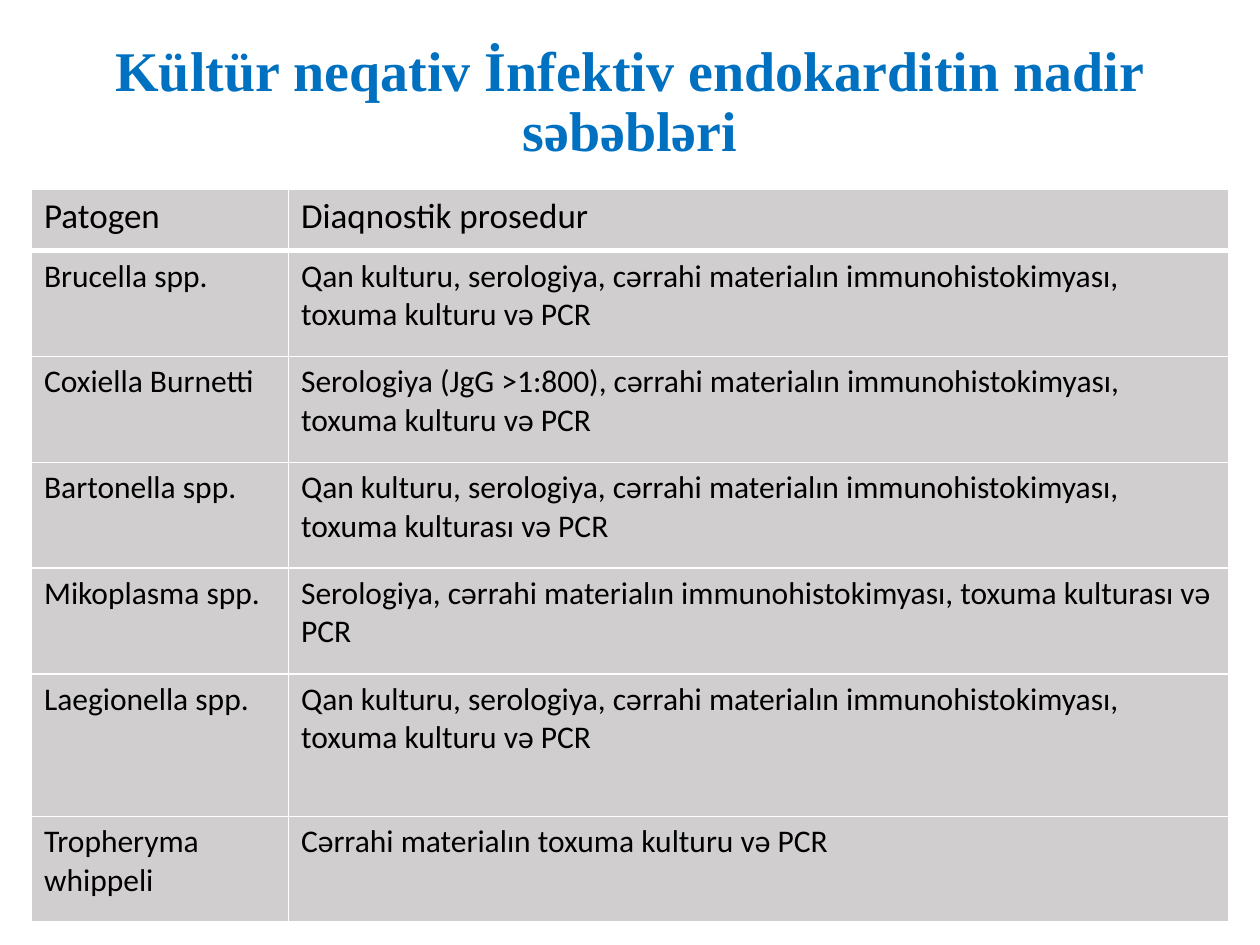
from lxml.etree import SubElement
from pptx import Presentation
from pptx.dml.color import RGBColor
from pptx.enum.text import MSO_ANCHOR, PP_ALIGN
from pptx.oxml.ns import qn
from pptx.util import Inches, Pt

BLUE, BLACK, GREY, WHITE = "0070C0", "000000", "D0CECE", "FFFFFF"

HEADING = "Kültür neqativ İnfektiv endokarditin nadir səbəbləri"
PATHOGENS = [
    ("Patogen", "Diaqnostik prosedur"),
    ("Brucella spp.", "Qan kulturu, serologiya, cərrahi materialın immunohistokimyası, toxuma kulturu və PCR"),
    ("Coxiella Burnetti", "Serologiya (JgG >1:800), cərrahi materialın immunohistokimyası, toxuma kulturu və PCR"),
    ("Bartonella spp.", "Qan kulturu, serologiya, cərrahi materialın immunohistokimyası, toxuma kulturası və PCR"),
    ("Mikoplasma spp.", "Serologiya, cərrahi materialın immunohistokimyası, toxuma kulturası və PCR"),
    ("Laegionella spp.", "Qan kulturu, serologiya, cərrahi materialın immunohistokimyası, toxuma kulturu və PCR"),
    ("Tropheryma whippeli", "Cərrahi materialın toxuma kulturu və PCR"),
]
COLUMN_WIDTHS = [2.04, 7.46]
ROW_HEIGHTS = [0.49, 0.84, 0.84, 0.84, 0.84, 1.13, 0.84]


def color(value):
    """Turn a hex string into a colour."""
    return RGBColor.from_string(value)


def write(frame, text, *, size, font="Calibri", fill=BLACK, bold=False,
          align=PP_ALIGN.LEFT, spacing=None):
    """Put one formatted paragraph into a text frame."""
    frame.word_wrap = True
    paragraph = frame.paragraphs[0]
    paragraph.alignment = align
    paragraph.line_spacing = spacing
    run = paragraph.add_run()
    run.text = text
    run.font.name = font
    run.font.size = Pt(size)
    run.font.bold = bold
    run.font.color.rgb = color(fill)


def add_borders(cell, bottom):
    """Draw white lines around a cell."""
    properties = cell._tc.get_or_add_tcPr()
    for side, width in (("L", 1), ("R", 1), ("T", 1), ("B", bottom)):
        line = SubElement(properties, qn(f"a:ln{side}"), w=str(Pt(width)))
        SubElement(SubElement(line, qn("a:solidFill")), qn("a:srgbClr"), val=WHITE)


def place_heading(slide, left, top, width, height):
    """Place the slide title in its box."""
    title = slide.shapes.title
    title.left, title.top = Inches(left), Inches(top)
    title.width, title.height = Inches(width), Inches(height)
    title.text_frame.vertical_anchor = MSO_ANCHOR.MIDDLE
    write(title.text_frame, HEADING, size=32, font="Times New Roman", fill=BLUE,
          bold=True, align=PP_ALIGN.CENTER, spacing=0.9)


def place_pathogens(slide, left, top, width, height):
    """Place the table of pathogens and diagnostic procedures."""
    table = slide.shapes.add_table(
        len(PATHOGENS), len(COLUMN_WIDTHS),
        Inches(left), Inches(top), Inches(width), Inches(height)).table
    table.horz_banding = False
    for column, column_width in zip(table.columns, COLUMN_WIDTHS):
        column.width = Inches(column_width)
    for index, (row, row_height, entries) in enumerate(zip(table.rows, ROW_HEIGHTS, PATHOGENS)):
        row.height = Inches(row_height)
        is_header = index == 0
        for cell, entry in zip(row.cells, entries):
            add_borders(cell, bottom=3 if is_header else 1)
            cell.fill.solid()
            cell.fill.fore_color.rgb = color(GREY)
            write(cell.text_frame, entry, size=20 if is_header else 18)


def main():
    """Build and save the slide."""
    deck = Presentation()
    deck.slide_width, deck.slide_height = Inches(10), Inches(7.5)
    slide = deck.slides.add_slide(deck.slide_layouts.get_by_name("Title Only"))
    slide.background.fill.solid()
    slide.background.fill.fore_color.rgb = color(WHITE)
    place_heading(slide, 0.25, 0.33, 9.5, 0.98)
    place_pathogens(slide, 0.25, 1.5, sum(COLUMN_WIDTHS), sum(ROW_HEIGHTS))
    deck.save("out.pptx")


if __name__ == "__main__":
    main()
